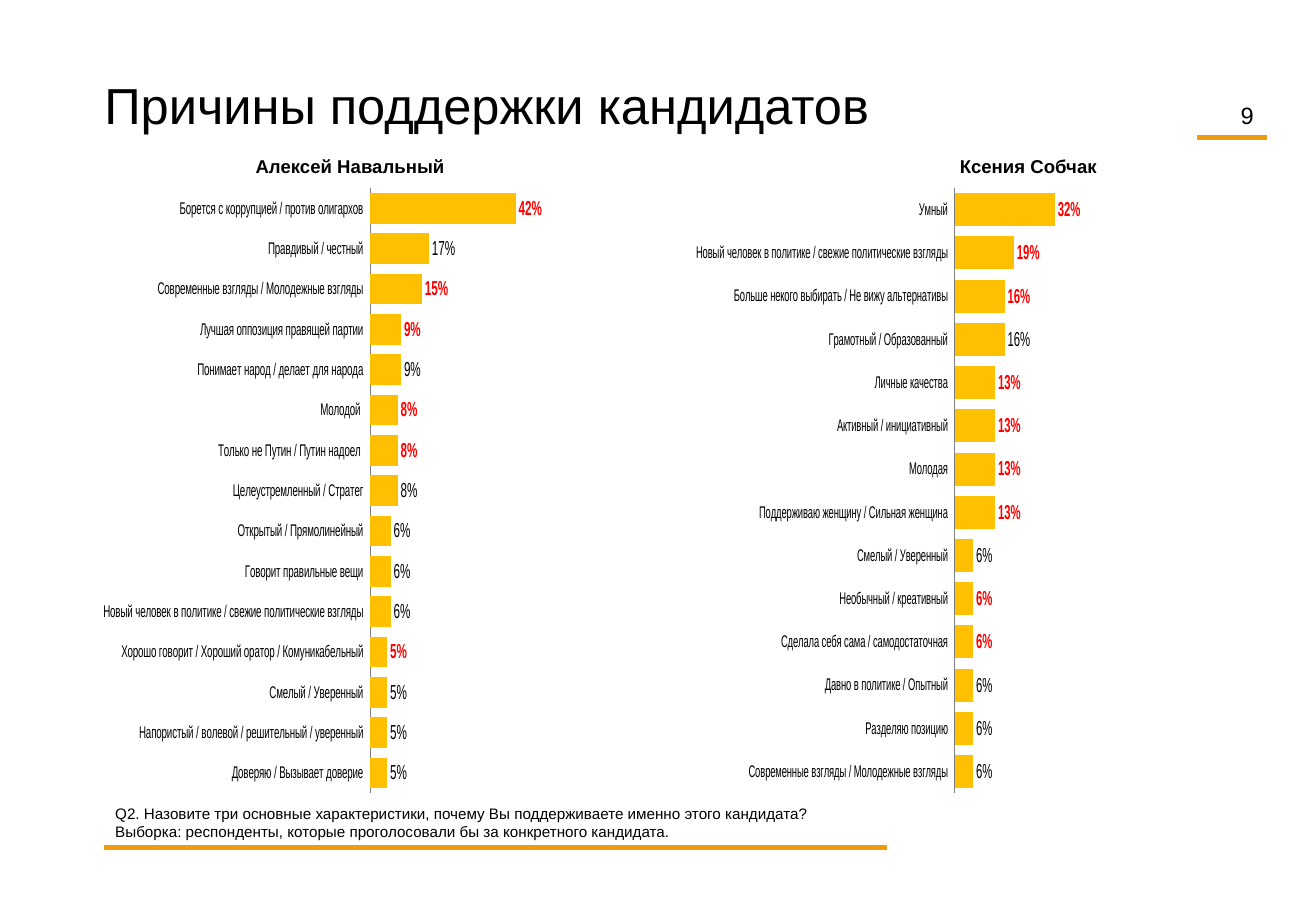
from lxml.etree import SubElement
from pptx import Presentation
from pptx.chart.data import CategoryChartData
from pptx.dml.color import RGBColor
from pptx.enum.chart import XL_CHART_TYPE, XL_LABEL_POSITION, XL_TICK_LABEL_POSITION, XL_TICK_MARK
from pptx.enum.shapes import MSO_CONNECTOR
from pptx.enum.text import MSO_ANCHOR, PP_ALIGN
from pptx.oxml import parse_xml
from pptx.oxml.ns import nsdecls, qn
from pptx.util import Cm, Pt

FONT = "Arial"
BLACK, RED, BAR, AXIS, RULE = "000000", "FF0000", "FFC000", "808080", "EF9B10"
TITLE = "Причины поддержки кандидатов"
PAGE_NUMBER = "9"
FOOTNOTE = [
    "Q2. Назовите три основные характеристики, почему Вы поддерживаете именно этого кандидата?",
    "Выборка: респонденты, которые проголосовали бы за конкретного кандидата.",
]
# Boxes are left, top, width, height in cm; each reason is text, share, highlighted.
CANDIDATES = [
    {
        "name": "Ксения Собчак",
        "name_box": (19.15, 3.12, 4.95, 0.61),
        "chart_box": (14.55, 3.91, 11.99, 12.78),
        "plot_left": 0.018,
        "reasons": [
            ("Умный", 0.32, True),
            ("Новый человек в политике / свежие политические взгляды", 0.19, True),
            ("Больше некого выбирать / Не вижу альтернативы", 0.16, True),
            ("Грамотный / Образованный", 0.16, False),
            ("Личные качества", 0.13, True),
            ("Активный / инициативный", 0.13, True),
            ("Молодая", 0.13, True),
            ("Поддерживаю женщину / Сильная женщина", 0.13, True),
            ("Смелый / Уверенный", 0.06, False),
            ("Необычный / креативный", 0.06, True),
            ("Сделала себя сама / самодостаточная", 0.06, True),
            ("Давно в политике / Опытный", 0.06, False),
            ("Разделяю позицию", 0.06, False),
            ("Современные взгляды / Молодежные взгляды", 0.06, False),
        ],
    },
    {
        "name": "Алексей Навальный",
        "name_box": (4.55, 3.12, 5.79, 0.61),
        "chart_box": (2.16, 3.91, 12.83, 12.78),
        "plot_left": 0.513,
        "reasons": [
            ("Борется с коррупцией / против олигархов", 0.42, True),
            ("Правдивый / честный", 0.17, False),
            ("Современные взгляды / Молодежные взгляды", 0.15, True),
            ("Лучшая оппозиция правящей партии", 0.09, True),
            ("Понимает народ / делает для народа", 0.09, False),
            ("Молодой ", 0.08, True),
            ("Только не Путин / Путин надоел ", 0.08, True),
            ("Целеустремленный / Стратег", 0.08, False),
            ("Открытый / Прямолинейный", 0.06, False),
            ("Говорит правильные вещи", 0.06, False),
            ("Новый человек в политике / свежие политические взгляды", 0.06, False),
            ("Хорошо говорит / Хороший оратор / Комуникабельный", 0.05, True),
            ("Смелый / Уверенный", 0.05, False),
            ("Напористый / волевой / решительный / уверенный", 0.05, False),
            ("Доверяю / Вызывает доверие", 0.05, False),
        ],
    },
]


def color(value):
    return RGBColor.from_string(value)


def lengths(box):
    return [Cm(value) for value in box]


def style_font(font, size, bold=False, fill=BLACK):
    font.name, font.size, font.bold = FONT, Pt(size), bold
    font.color.rgb = color(fill)


def write_text(shape, lines, size, align=PP_ALIGN.LEFT, bold=False, left=0.25, right=0.25):
    frame = shape.text_frame
    frame.word_wrap = True
    frame.margin_left, frame.margin_right = Cm(left), Cm(right)
    frame.margin_top = frame.margin_bottom = Cm(0.13)
    for index, line in enumerate(lines):
        paragraph = frame.add_paragraph() if index else frame.paragraphs[0]
        paragraph.alignment = align
        run = paragraph.add_run()
        run.text = line
        style_font(run.font, size, bold)


def add_text(slide, box, lines, size, **options):
    write_text(slide.shapes.add_textbox(*lengths(box)), lines, size, **options)


def add_rule(slide, start, end, top):
    rule = slide.shapes.add_connector(MSO_CONNECTOR.STRAIGHT, Cm(start), Cm(top), Cm(end), Cm(top))
    rule.line.color.rgb = color(RULE)
    rule.line.width = Pt(3)
    SubElement(rule._element.spPr, qn("a:effectLst"))


def place_plot(chart, left):
    """Fix the inner plot area as fractions of the chart."""
    area = chart.plots[0]._element.getparent()
    for layout in area.findall(qn("c:layout")):
        area.remove(layout)
    area.insert(0, parse_xml(
        f'<c:layout {nsdecls("c")}><c:manualLayout><c:layoutTarget val="inner"/>'
        f'<c:xMode val="edge"/><c:yMode val="edge"/><c:x val="{left}"/><c:y val="0.002"/>'
        '<c:w val="0.98"/><c:h val="0.99"/></c:manualLayout></c:layout>'))


def add_reasons_chart(slide, candidate):
    reasons = candidate["reasons"]
    data = CategoryChartData(number_format="0%")
    data.categories = [text for text, _, _ in reasons]
    data.add_series("Series 1", [share for _, share, _ in reasons])
    chart = slide.shapes.add_chart(
        XL_CHART_TYPE.BAR_CLUSTERED, *lengths(candidate["chart_box"]), data).chart
    chart.has_legend = chart.has_title = False
    style_font(chart.font, 11)

    categories = chart.category_axis
    categories.reverse_order = True
    categories.major_tick_mark = categories.minor_tick_mark = XL_TICK_MARK.NONE
    categories.tick_label_position = XL_TICK_LABEL_POSITION.LOW
    categories.format.line.color.rgb = color(AXIS)
    style_font(categories.tick_labels.font, 10)

    values = chart.value_axis
    values.minimum_scale, values.maximum_scale, values.major_unit = 0, 1, 0.5
    values.has_major_gridlines = False
    values.visible = False

    plot = chart.plots[0]
    plot.gap_width = 31
    plot.vary_by_categories = False
    series = plot.series[0]
    series.format.fill.solid()
    series.format.fill.fore_color.rgb = color(BAR)
    labels = series.data_labels
    labels.show_value = True
    labels.number_format, labels.number_format_is_linked = "#,##0%", False
    labels.position = XL_LABEL_POSITION.OUTSIDE_END
    style_font(labels.font, 12)
    for index, (_, _, highlighted) in enumerate(reasons):
        if highlighted:
            label = series.points[index].data_label
            style_font(label.font, 12, True, RED)
            label.position = XL_LABEL_POSITION.OUTSIDE_END
    place_plot(chart, candidate["plot_left"])


def main():
    presentation = Presentation()
    presentation.slide_width, presentation.slide_height = Cm(27.51), Cm(19.05)
    slide = presentation.slides.add_slide(presentation.slide_layouts[5])

    title = slide.shapes.title
    title.left, title.top, title.width, title.height = lengths((2.18, 1.4, 22.81, 1.55))
    write_text(title, [TITLE], 30, left=0, right=0)
    title.text_frame.vertical_anchor = MSO_ANCHOR.MIDDLE

    add_rule(slide, 2.18, 18.54, 17.73)
    add_rule(slide, 25.02, 26.49, 2.87)
    add_text(slide, (24.99, 1.98, 1.47, 0.74), [PAGE_NUMBER], 14, align=PP_ALIGN.RIGHT)
    for candidate in CANDIDATES:
        add_reasons_chart(slide, candidate)
        add_text(slide, candidate["name_box"], [candidate["name"]], 11,
                 align=PP_ALIGN.CENTER, bold=True, left=0)
    add_text(slide, (2.16, 16.69, 24.41, 1.02), FOOTNOTE, 9)
    presentation.save("out.pptx")


if __name__ == "__main__":
    main()
